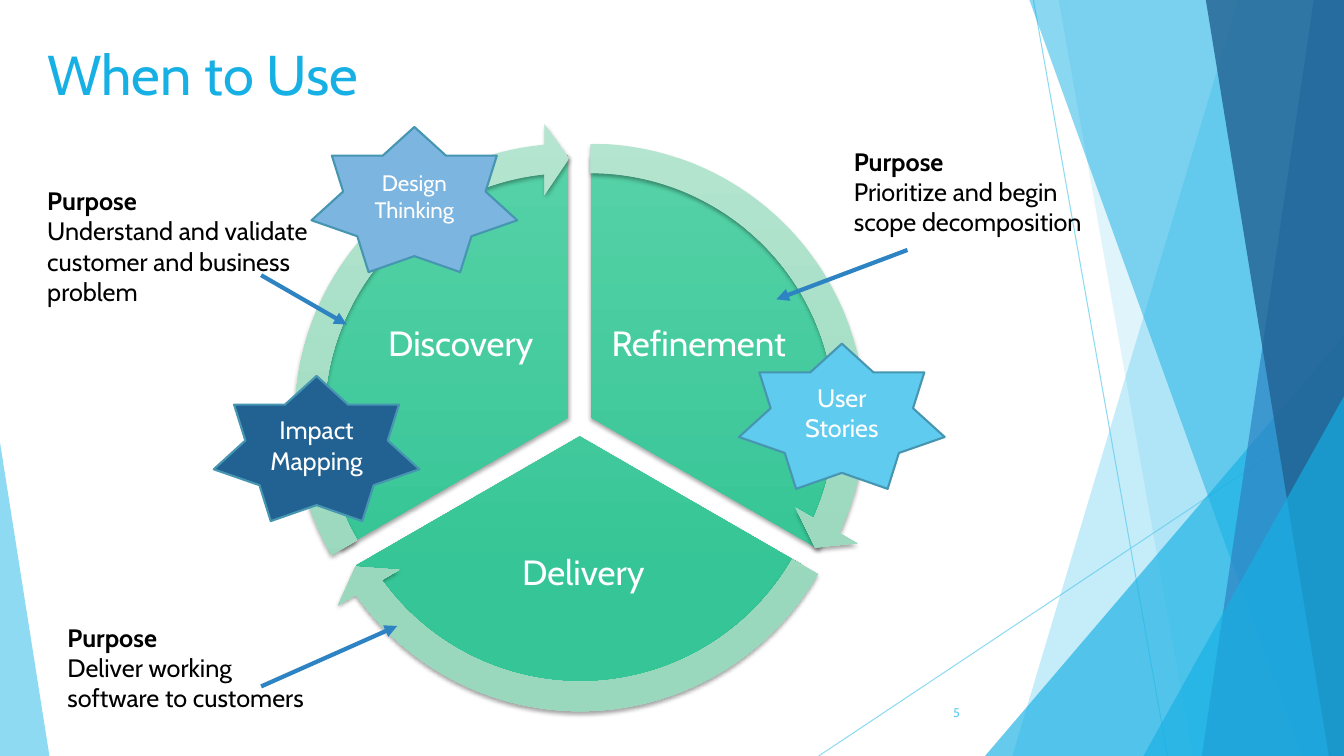
import pptx
import pptx.util
import pptx.dml.color
import pptx.enum.shapes
import pptx.enum.text
import pptx.oxml
import pptx.oxml.ns

Inches, Pt = pptx.util.Inches, pptx.util.Pt
RGB = pptx.dml.color.RGBColor
SHAPE = pptx.enum.shapes.MSO_SHAPE
ALIGN = pptx.enum.text.PP_ALIGN
ANCHOR = pptx.enum.text.MSO_ANCHOR
AUTO = pptx.enum.text.MSO_AUTO_SIZE

WIDE, HIGH = 13.33, 7.5
FONT = "Cabin"
WHITE, BLACK = RGB(255, 255, 255), RGB(0, 0, 0)
SKY, CYAN = RGB(0x5F, 0xCB, 0xEF), RGB(0x17, 0xB0, 0xE4)
BLUE, NAVY = RGB(0x2E, 0x83, 0xC3), RGB(0x22, 0x62, 0x92)
PALE, EDGE = RGB(0x7C, 0xB5, 0xE0), RGB(0x46, 0x96, 0xB1)
GREEN = (RGB(0x56, 0xD2, 0xA7), RGB(0x36, 0xC5, 0x96))
MINT = (RGB(0xB4, 0xE5, 0xD0), RGB(0x9A, 0xD8, 0xBD))

RAYS = [(10.25, 0, 11.58, HIGH), (WIDE, 4.03, 8.12, HIGH)]
# Panels: left edge as (top x, bottom x), colour, opacity
# Triangles: box, apex, colour, opacity
FACETS = [
    ((12.28, 10.04), SKY, 36),
    ((10.5, 11.83), SKY, 20),
    ((9.77, 3.33, 3.56, 4.17), 1, CYAN, 66),
    ((10.21, 12.91), CYAN, 50),
    ((13.03, 11.92), BLUE, 70),
    ((11.96, 13.18), NAVY, 80),
    ((11.34, 3.93, 1.99, 3.57), 1, CYAN, 66),
    ((0, 4.39, 0.49, 3.11), 0, SKY, 70),
]
# Name, pie box, start and end angle, label box
PHASES = [
    ("Refinement", (3.26, 1.54, 5.2, 5.2), 270, 30, (6, 2.65, 1.86, 1.55)),
    ("Delivery", (3.15, 1.88, 5.2, 4.9), 30, 150, (4.39, 5.06, 2.79, 1.28)),
    ("Discovery", (3.04, 1.54, 5.2, 5.2), 150, 270, (3.64, 2.65, 1.86, 1.55)),
]
# Left, top, head angle, start angle
ARCS = [(2.93, 1.22, 24.54, 269.99), (2.83, 1.41, 144.53, 30.01),
        (2.72, 1.22, 264.55, 150)]
ARC = 5.85
NOTES = [
    ("Understand and validate customer and business problem", (0.37, 1.79, 2.78, 1.62)),
    ("Prioritize and begin scope decomposition", (8.37, 1.4, 2.78, 1.31)),
    ("Deliver working software to customers", (0.57, 6.12, 2.78, 1.31)),
]
STARS = [("Impact Mapping", 2.12, 3.73, NAVY, 18),
         ("Design Thinking", 3.09, 1.26, PALE, 16),
         ("User Stories", 7.33, 3.41, SKY, 18)]
LINKS = [(2.59, 2.73, 3.44, 3.22), (2.59, 6.81, 3.94, 6.21), (9, 2.48, 7.7, 2.97)]

deck = pptx.Presentation()
deck.slide_width, deck.slide_height = Inches(WIDE), Inches(HIGH)
slide = deck.slides.add_slide(deck.slide_layouts[5])
shapes = slide.shapes


def node(parent, tag, **attrs):
    item = pptx.oxml.parse_xml(f"<a:{tag} {pptx.oxml.ns.nsdecls('a')}/>")
    for key, value in attrs.items():
        item.set(key, str(value))
    parent.append(item)
    return item


def fade(part, rate):
    """Set the opacity, in percent, of the first colour in a part."""
    tone = next(part.iter(pptx.oxml.ns.qn("a:srgbClr")))
    node(tone, "alpha", val=rate * 1000)


def place(kind, box, *adjust):
    shape = shapes.add_shape(kind, *map(Inches, box))
    shape.shadow.inherit = False
    shape.line.fill.background()
    for i, value in enumerate(adjust):
        shape.adjustments[i] = value
    return shape


def turn(angle):
    """Degrees as an adjustment value."""
    return angle * 0.6


def shade(shape, tones):
    """Vertical gradient and soft shadow."""
    shape.fill.gradient()
    shape.fill.gradient_angle = 270
    for stop, tone, spot in zip(shape.fill.gradient_stops, tones, (0, 0.78)):
        stop.color.rgb = tone
        stop.position = spot
    fx = shape._element.spPr.find(pptx.oxml.ns.qn("a:effectLst"))
    drop = node(fx, "outerShdw", blurRad=Pt(3), dist=Pt(2), dir=5400000, rotWithShape=0)
    node(node(drop, "srgbClr", val="000000"), "alpha", val=35000)


def draw(ends, colour, width):
    line = shapes.add_connector(pptx.enum.shapes.MSO_CONNECTOR.STRAIGHT,
                                *map(Inches, ends))
    line.line.color.rgb = colour
    line.line.width = Pt(width)
    node(line._element.spPr, "effectLst")
    return line


def write(frame, lines, size, colour, align=ALIGN.LEFT, anchor=ANCHOR.TOP):
    """Fill a frame with (text, bold) lines."""
    frame.word_wrap = True
    frame.auto_size = AUTO.NONE
    frame.vertical_anchor = anchor
    for i, (text, bold) in enumerate(lines):
        para = frame.add_paragraph() if i else frame.paragraphs[0]
        para.alignment = align
        run = para.add_run()
        run.text = text
        run.font.name, run.font.size, run.font.bold = FONT, Pt(size), bold
        run.font.color.rgb = colour


def label(box, *style):
    frame = shapes.add_textbox(*map(Inches, box)).text_frame
    write(frame, *style)
    return frame


for ends in RAYS:
    fade(draw(ends, SKY, 0.75)._element.spPr, 70)

for edge, *apex, colour, rate in FACETS:
    if apex:
        facet = place(SHAPE.ISOSCELES_TRIANGLE, edge, *apex)
    else:
        top, base = edge
        pen = shapes.build_freeform(Inches(top), 0)
        pen.add_line_segments([(Inches(x), Inches(y)) for x, y in
                               ((WIDE, 0), (WIDE, HIGH), (base, HIGH))])
        facet = pen.convert_to_shape()
        facet.shadow.inherit = False
        facet.line.fill.background()
    facet.fill.solid()
    facet.fill.fore_color.rgb = colour
    fade(facet._element.spPr, rate)

for name, box, start, end, spot in PHASES:
    shade(place(SHAPE.PIE, box, turn(start), turn(end)), GREEN)
    frame = label(spot, [(name, False)], 25, WHITE, ALIGN.CENTER, ANCHOR.MIDDLE)
    frame.margin_left = frame.margin_right = Inches(0.03)
    frame.margin_top = frame.margin_bottom = Inches(0.03)
    frame.paragraphs[0].line_spacing = 0.9

for left, top, head, start in ARCS:
    shade(place(SHAPE.CIRCULAR_ARROW, (left, top, ARC, ARC),
                0.05, turn(5.46), turn(head), turn(start), 0.06), MINT)

label((8.87, 6.91, 0.75, 0.31), [("5", False)], 9, SKY, ALIGN.RIGHT, ANCHOR.MIDDLE)

title = shapes.title
title.left, title.top, title.width, title.height = map(Inches, (0.37, 0.34, 9.4, 1.44))
write(title.text_frame, [("When to Use", False)], 40, CYAN)

for text, box in NOTES:
    label(box, [("Purpose", True), (text, False)], 18, BLACK)

for text, left, top, colour, size in STARS:
    star = place(SHAPE.STAR_7_POINT, (left, top, 2.04, 1.44))
    star.fill.solid()
    star.fill.fore_color.rgb = colour
    star.line.color.rgb = EDGE
    star.line.width = Pt(1.5)
    write(star.text_frame, [(text, False)], size, WHITE, ALIGN.CENTER, ANCHOR.MIDDLE)

for ends in LINKS:
    link = draw(ends, BLUE, 3)
    node(link.line._get_or_add_ln(), "tailEnd", type="triangle")

deck.save("out.pptx")
